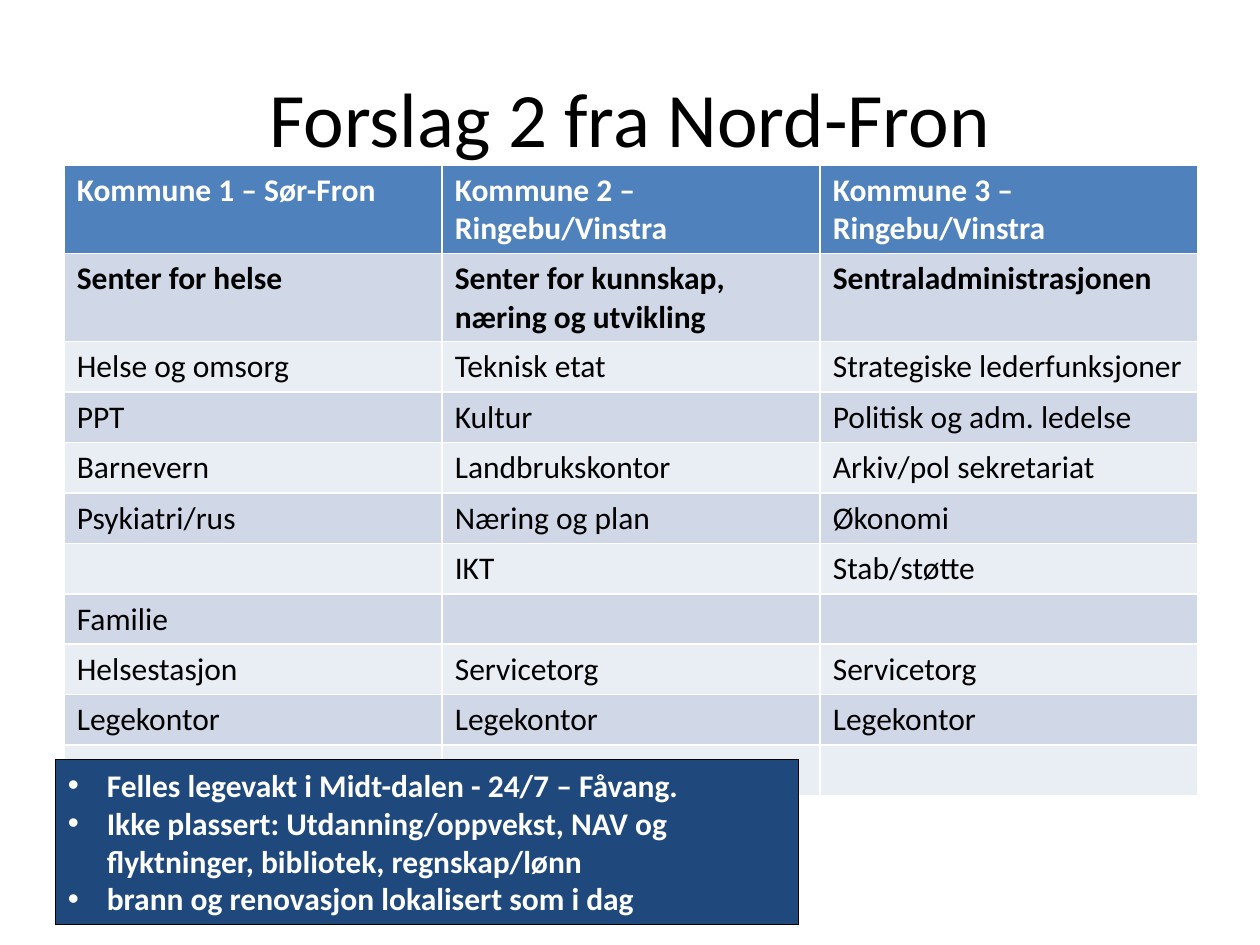
import dataclasses

import pptx
import pptx.dml.color
import pptx.enum.shapes
import pptx.enum.text
import pptx.oxml.ns
import pptx.util
from lxml import etree
from pptx.util import Inches


@dataclasses.dataclass(frozen=True)
class Theme:
    """Colours and type sizes of the slide."""
    font: str = "Calibri"
    title_size: int = 44
    body_size: int = 18
    dark: str = "000000"
    light: str = "FFFFFF"
    header: str = "4F81BD"
    bands: tuple = ("D0D8E8", "E9EDF4")
    note: str = "1F497D"


THEME = Theme()

TITLE = "Forslag 2 fra Nord-Fron"
PROPOSAL = [
    ("Kommune 1 – Sør-Fron", "Kommune 2 – Ringebu/Vinstra", "Kommune 3 – Ringebu/Vinstra"),
    ("Senter for helse", "Senter for kunnskap, næring og utvikling", "Sentraladministrasjonen"),
    ("Helse og omsorg", "Teknisk etat", "Strategiske lederfunksjoner"),
    ("PPT", "Kultur", "Politisk og adm. ledelse"),
    ("Barnevern", "Landbrukskontor", "Arkiv/pol sekretariat"),
    ("Psykiatri/rus", "Næring og plan", "Økonomi"),
    ("", "IKT", "Stab/støtte"),
    ("Familie", "", ""),
    ("Helsestasjon", "Servicetorg", "Servicetorg"),
    ("Legekontor", "Legekontor", "Legekontor"),
    ("", "", ""),
]
NOTES = [
    "Felles legevakt i Midt-dalen - 24/7 – Fåvang.",
    "Ikke plassert: Utdanning/oppvekst, NAV og flyktninger, bibliotek, regnskap/lønn",
    "brann og renovasjon lokalisert som i dag",
]


def rgb(value):
    """Turn a hex string into a colour."""
    return pptx.dml.color.RGBColor.from_string(value)


def apply(target, formats):
    """Set each attribute named in formats on target."""
    for name, value in formats.items():
        setattr(target, name, value)


def paint(target, color):
    """Give target a solid fill."""
    target.fill.solid()
    target.fill.fore_color.rgb = rgb(color)


def write(paragraph, text, size, color, bold=False):
    """Put text with its type settings into a paragraph."""
    run = paragraph.add_run()
    run.text = text
    apply(run.font, {"name": THEME.font, "size": pptx.util.Pt(size), "bold": bold})
    run.font.color.rgb = rgb(color)


def add_bullet(paragraph, indent):
    """Give a paragraph a hanging bullet."""
    properties = paragraph._p.get_or_add_pPr()
    properties.set("marL", str(indent))
    properties.set("indent", str(-indent))
    etree.SubElement(properties, pptx.oxml.ns.qn("a:buFont"), typeface="Arial")
    etree.SubElement(properties, pptx.oxml.ns.qn("a:buChar"), char="•")


def add_title(slide):
    """Add the centred heading."""
    frame = slide.shapes.add_textbox(Inches(0.5), Inches(0.3), Inches(9), Inches(1.25)).text_frame
    apply(frame, {"word_wrap": True, "vertical_anchor": pptx.enum.text.MSO_ANCHOR.MIDDLE})
    heading = frame.paragraphs[0]
    heading.alignment = pptx.enum.text.PP_ALIGN.CENTER
    write(heading, TITLE, THEME.title_size, THEME.dark)


def add_proposal(slide):
    """Add the table of municipalities and their services."""
    heights = [0.7, 0.7] + [0.4] * (len(PROPOSAL) - 2)
    table = slide.shapes.add_table(
        len(PROPOSAL), len(PROPOSAL[0]),
        Inches(0.51), Inches(1.31), Inches(9), Inches(sum(heights))).table
    for index, services in enumerate(PROPOSAL):
        table.rows[index].height = Inches(heights[index])
        is_header = index == 0
        for column, service in enumerate(services):
            cell = table.cell(index, column)
            paint(cell, THEME.header if is_header else THEME.bands[(index - 1) % 2])
            if service:
                write(cell.text_frame.paragraphs[0], service, THEME.body_size,
                      THEME.light if is_header else THEME.dark, bold=index < 2)


def add_notes_box(slide):
    """Add the box of bulleted remarks."""
    box = slide.shapes.add_shape(
        pptx.enum.shapes.MSO_SHAPE.RECTANGLE,
        Inches(0.44), Inches(6.03), Inches(5.9), Inches(1.31))
    box.shadow.inherit = False
    paint(box, THEME.note)
    paint(box.line, THEME.dark)
    box.line.width = pptx.util.Pt(0.75)
    frame = box.text_frame
    apply(frame, {"word_wrap": True, "vertical_anchor": pptx.enum.text.MSO_ANCHOR.TOP,
                  "auto_size": pptx.enum.text.MSO_AUTO_SIZE.SHAPE_TO_FIT_TEXT})
    for index, remark in enumerate(NOTES):
        paragraph = frame.add_paragraph() if index else frame.paragraphs[0]
        paragraph.alignment = pptx.enum.text.PP_ALIGN.LEFT
        write(paragraph, remark, THEME.body_size, THEME.light, bold=True)
        add_bullet(paragraph, Inches(0.31))


def main():
    """Build and save the slide."""
    deck = pptx.Presentation()
    apply(deck, {"slide_width": Inches(10), "slide_height": Inches(7.5)})
    slide = deck.slides.add_slide(deck.slide_layouts[6])
    add_title(slide)
    add_proposal(slide)
    add_notes_box(slide)
    deck.save("out.pptx")


if __name__ == "__main__":
    main()
